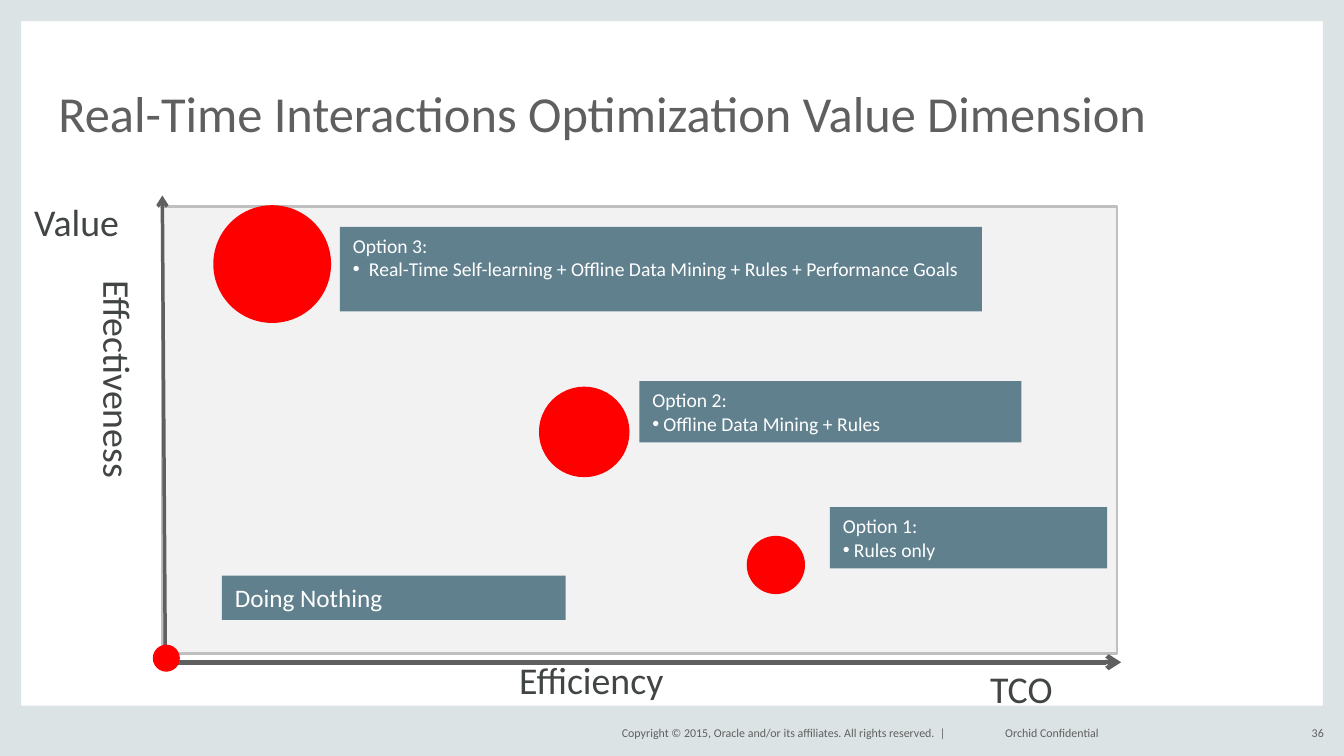
"""Build the value dimension slide: options plotted by effectiveness and efficiency."""
from lxml import etree
from pptx import Presentation, util as u
from pptx.dml.color import RGBColor
from pptx.enum import shapes, text
from pptx.oxml import ns

PX = 9144
WHITE = RGBColor(0xFF, 0xFF, 0xFF)
MIST = RGBColor(0xDC, 0xE3, 0xE4)
PALE = RGBColor(0xF2, 0xF2, 0xF2)
SILVER = RGBColor(0xBF, 0xBF, 0xBF)
GRAY = RGBColor(0x5F, 0x5F, 0x5F)
INK = RGBColor(0x42, 0x45, 0x45)
SLATE = RGBColor(0x61, 0x80, 0x8E)
RED = RGBColor(0xFF, 0, 0)
KIND = shapes.MSO_SHAPE
ALIGN = text.PP_ALIGN
ANCHOR = text.MSO_ANCHOR

deck = Presentation()
deck.slide_width, deck.slide_height = 1333 * PX, 750 * PX
slide = deck.slides.add_slide(deck.slide_layouts[6])


def draw(kind, box, fill, line=None):
    shape = slide.shapes.add_shape(kind, *[n * PX for n in box])
    shape.shadow.inherit = False
    shape.fill.solid()
    shape.fill.fore_color.rgb = fill
    if line is None:
        shape.line.fill.background()
    else:
        shape.line.color.rgb = line
        shape.line.width = u.Pt(2)
    return shape


def write(shape, lines, size, color, pad=(13, 7), anchor=ANCHOR.TOP, align=ALIGN.LEFT, hang=0):
    frame = shape.text_frame
    form = dict(word_wrap=True, auto_size=text.MSO_AUTO_SIZE.NONE, vertical_anchor=anchor,
                margin_left=pad[0] * PX, margin_right=pad[0] * PX,
                margin_top=pad[1] * PX, margin_bottom=pad[1] * PX)
    for key, val in form.items():
        setattr(frame, key, val)
    for i, line in enumerate(lines):
        para = frame.paragraphs[0] if i == 0 else frame.add_paragraph()
        if i:
            props = para._p.get_or_add_pPr()
            props.set("marL", str(hang * PX))
            props.set("indent", str(-hang * PX))
            etree.SubElement(props, ns.qn("a:buFont"), typeface="Arial")
            etree.SubElement(props, ns.qn("a:buChar"), char="•")
        para.text = line
        para.alignment = align
        for key, val in dict(name="Calibri", size=u.Pt(size)).items():
            setattr(para.font, key, val)
        para.font.color.rgb = color
    return frame


for box in [(0, 0, 21, 750), (1312, 0, 21, 750), (0, 700, 1333, 50), (0, 0, 1333, 21)]:
    draw(KIND.RECTANGLE, box, MIST)

title = slide.shapes.add_textbox(*[n * PX for n in (58, 44, 1217, 97)])
head = write(title, ["Real-Time Interactions Optimization Value Dimension"], 36, GRAY,
             (0, 0), ANCHOR.BOTTOM)
head.paragraphs[0].line_spacing = 0.8

for words, left, width, align in [
    ("Copyright © 2015, Oracle and/or its affiliates. All rights reserved.  |", 588, 350, ALIGN.RIGHT),
    ("Orchid Confidential", 997, 273, ALIGN.LEFT),
    ("36", 1271, 42, ALIGN.RIGHT),
]:
    foot = slide.shapes.add_textbox(left * PX, 717 * PX, width * PX, 20 * PX)
    write(foot, [words], 8.5, GRAY, (0, 0), ANCHOR.MIDDLE, align)

draw(KIND.RECTANGLE, (161, 205, 947, 443), PALE, SILVER)

for ends, weight in [((164, 659, 161, 194), 2.5), ((161, 657, 1112, 657), 3.25)]:
    axis = slide.shapes.add_connector(shapes.MSO_CONNECTOR.STRAIGHT, *[n * PX for n in ends])
    axis.line.color.rgb = GRAY
    axis.line.width = u.Pt(weight)
    etree.SubElement(axis.line._get_or_add_ln(), ns.qn("a:tailEnd"), type="arrow")
    etree.SubElement(axis._element.spPr, ns.qn("a:effectLst"))

for left, top, size in [(742, 533, 55), (536, 385, 87), (213, 205, 114), (153, 641, 24)]:
    draw(KIND.OVAL, (left, top, size, size), RED, RED)

for box, lines, size, hang in [
    ((823, 503, 275, 61), ["Option 1:", "Rules only"], 14, 11),
    ((634, 378, 379, 61), ["Option 2:", "Offline Data Mining + Rules"], 14, 11),
    ((337, 225, 637, 84),
     ["Option 3:", "Real-Time Self-learning + Offline Data Mining + Rules + Performance Goals"], 14, 16),
    ((220, 571, 341, 44), ["Doing Nothing"], 18, 0),
]:
    write(draw(KIND.RECTANGLE, box, SLATE), lines, size, WHITE, hang=hang)

for words, box, turn in [
    ("TCO", (969, 653, 168, 58), 0),
    ("Value", (21, 190, 317, 58), 0),
    ("Effectiveness", (-41, 394, 317, 59), 90),
    ("Efficiency", (502, 644, 317, 58), 0),
]:
    label = slide.shapes.add_textbox(*[n * PX for n in box])
    label.rotation = turn
    write(label, [words], 27, INK)

deck.save("out.pptx")
